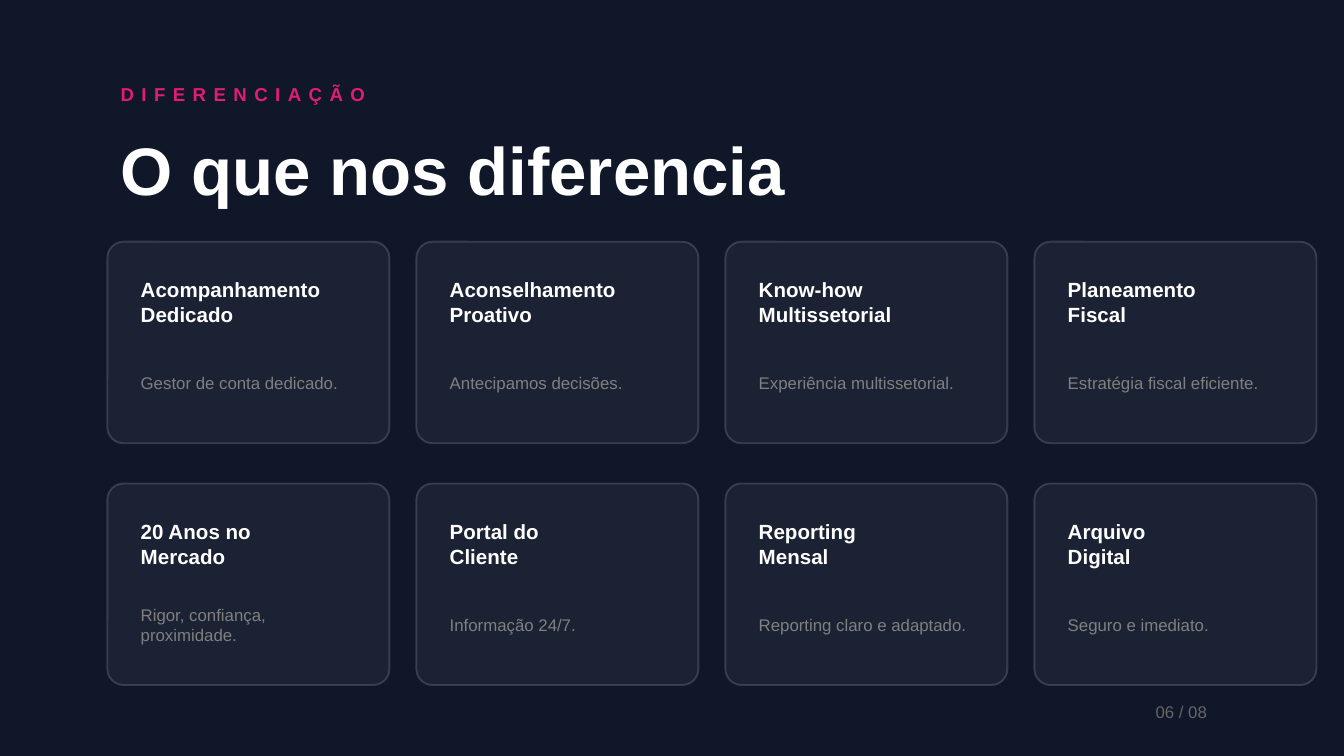
from dataclasses import dataclass

from lxml.etree import SubElement
from pptx import Presentation
from pptx.dml.color import RGBColor as RGB
from pptx.enum.shapes import MSO_SHAPE as SHAPE
from pptx.enum.text import MSO_ANCHOR as ANCHOR, MSO_AUTO_SIZE as AUTO_SIZE, PP_ALIGN as ALIGN
from pptx.oxml.ns import qn
from pptx.util import Cm, Pt


@dataclass(frozen=True)
class Theme:
    font: str = "Arial"
    background: str = "0F1729"
    accent: str = "E11D73"
    light: str = "FFFFFF"
    muted: str = "808080"
    faint: str = "666666"
    title_size: int = 36
    heading_size: int = 11
    eyebrow_size: int = 10
    small_size: int = 9
    card_opacity: int = 5
    border_opacity: int = 15


def write(tf, text, *, size, color, font, bold=False, spacing=None):
    """Fill a text frame, one paragraph per line; spacing is in points."""
    tf.word_wrap = True
    tf.auto_size = AUTO_SIZE.NONE
    tf.vertical_anchor = ANCHOR.MIDDLE
    tf.text = text
    for p in tf.paragraphs:
        p.alignment = ALIGN.LEFT
        for r in p.runs:
            r.font.name = font
            r.font.size = Pt(size)
            r.font.bold = bold
            r.font.color.rgb = RGB.from_string(color)
            if spacing:
                r._r.get_or_add_rPr().set("spc", str(spacing * 100))


def set_opacity(color_format_parent, percent):
    """Make the solid colour inside an XML element partly transparent."""
    color = next(color_format_parent.iter(qn("a:srgbClr")))
    SubElement(color, qn("a:alpha")).set("val", str(percent * 1000))


class SlideBuilder:
    """Holds the theme and the slide being built; lengths are in centimetres."""

    def __init__(self, slide, theme):
        self.slide = slide
        self.theme = theme
        fill = slide.background.fill
        fill.solid()
        fill.fore_color.rgb = RGB.from_string(theme.background)

    def title(self, text, left, top, width, height):
        sp = self.slide.shapes.title
        sp.left, sp.top, sp.width, sp.height = map(Cm, (left, top, width, height))
        write(sp.text_frame, text, size=self.theme.title_size,
              color=self.theme.light, font=self.theme.font, bold=True)

    def text(self, text, left, top, width, height, **style):
        sp = self.slide.shapes.add_textbox(*map(Cm, (left, top, width, height)))
        write(sp.text_frame, text, font=self.theme.font, **style)

    def panel(self, left, top, width, height):
        t = self.theme
        sp = self.slide.shapes.add_shape(
            SHAPE.ROUNDED_RECTANGLE, *map(Cm, (left, top, width, height)))
        sp.adjustments[0] = 0.08
        sp.shadow.inherit = False
        sp.fill.solid()
        sp.fill.fore_color.rgb = RGB.from_string(t.light)
        sp.line.color.rgb = RGB.from_string(t.light)
        sp.line.width = Pt(1)
        sp_pr = sp._element.spPr
        set_opacity(sp_pr.find(qn("a:solidFill")), t.card_opacity)
        set_opacity(sp_pr.find(qn("a:ln")), t.border_opacity)

    def card(self, heading, detail, left, top):
        t = self.theme
        pad, text_width = 0.38, 4.57
        self.panel(left, top, 5.33, 3.81)
        self.text(heading, left + pad, top + pad, text_width, 1.52,
                  size=t.heading_size, color=t.light, bold=True)
        self.text(detail, left + pad, top + 2.03, text_width, 1.27,
                  size=t.small_size, color=t.muted)


CARDS = [
    ("Acompanhamento\nDedicado", "Gestor de conta dedicado."),
    ("Aconselhamento\nProativo", "Antecipamos decisões."),
    ("Know-how\nMultissetorial", "Experiência multissetorial."),
    ("Planeamento\nFiscal", "Estratégia fiscal eficiente."),
    ("20 Anos no\nMercado", "Rigor, confiança, proximidade."),
    ("Portal do\nCliente", "Informação 24/7."),
    ("Reporting\nMensal", "Reporting claro e adaptado."),
    ("Arquivo\nDigital", "Seguro e imediato."),
]
COLUMNS = 4
MARGIN, GRID_TOP = 2.03, 4.57
COLUMN_STEP, ROW_STEP = 5.84, 4.57


def main():
    prs = Presentation()
    prs.slide_width, prs.slide_height = Cm(25.4), Cm(14.29)
    title_only = prs.slide_layouts[5]
    theme = Theme()
    s = SlideBuilder(prs.slides.add_slide(title_only), theme)

    s.text("DIFERENCIAÇÃO", MARGIN, 1.27, 20.32, 1.02,
           size=theme.eyebrow_size, color=theme.accent, bold=True, spacing=4)
    s.title("O que nos diferencia", MARGIN, 2.29, 20.32, 1.78)
    for i, (heading, detail) in enumerate(CARDS):
        row, column = divmod(i, COLUMNS)
        s.card(heading, detail, MARGIN + column * COLUMN_STEP, GRID_TOP + row * ROW_STEP)
    s.text("06 / 08", 21.59, 12.95, 3.05, 1.02,
           size=theme.small_size, color=theme.faint)

    prs.save("out.pptx")


if __name__ == "__main__":
    main()
